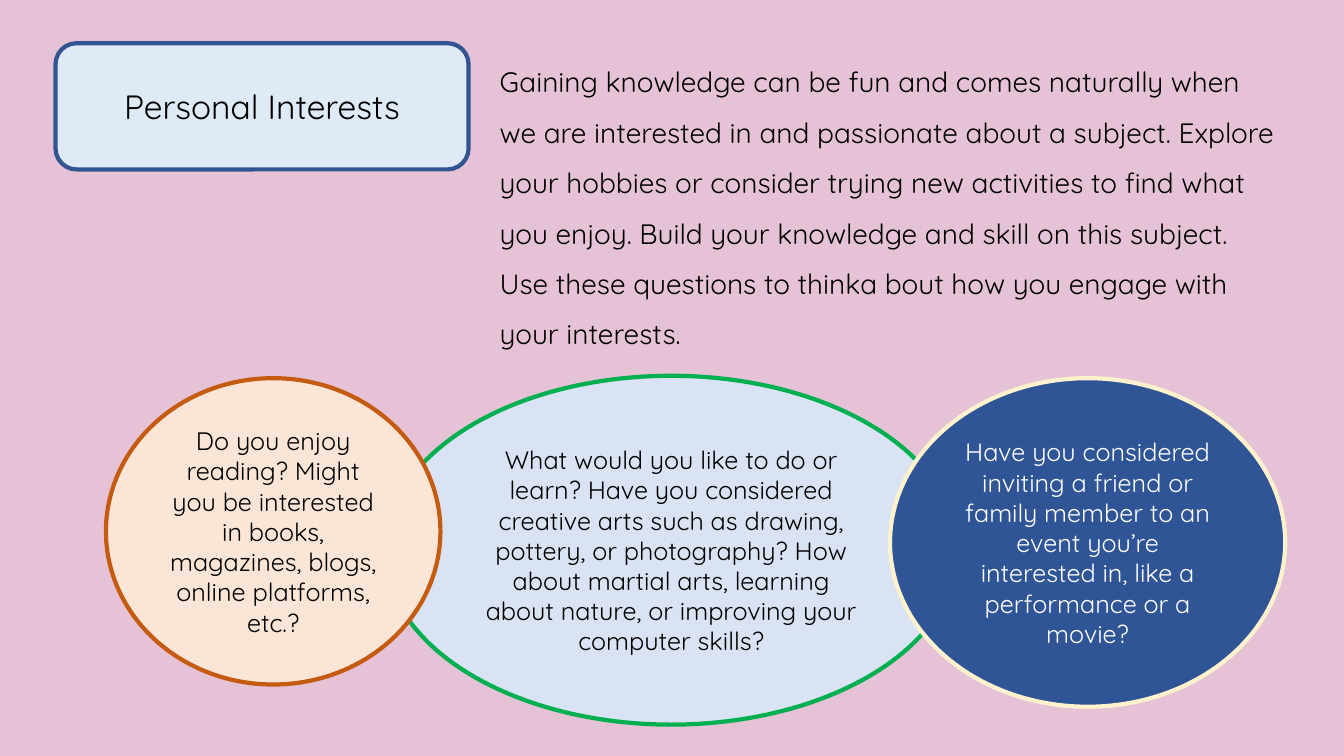
import pptx
import pptx.util
import pptx.dml.color
import pptx.enum.shapes
import pptx.enum.text

Cm = pptx.util.Cm
KIND = pptx.enum.shapes.MSO_SHAPE
ALIGN = pptx.enum.text.PP_ALIGN
ANCHOR = pptx.enum.text.MSO_ANCHOR


def paint(fill, color):
    fill.solid()
    fill.fore_color.rgb = pptx.dml.color.RGBColor.from_string(color)


def write(shape, text, size=18, color="000000", align=ALIGN.CENTER,
          anchor=ANCHOR.MIDDLE, space=1.0):
    frame = shape.text_frame
    frame.word_wrap = True
    frame.vertical_anchor = anchor
    para = frame.paragraphs[0]
    para.alignment = align
    para.line_spacing = space
    run = para.add_run()
    run.text = text
    run.font.name = "Quicksand"
    run.font.size = pptx.util.Pt(size)
    paint(run.font.fill, color)


deck = pptx.Presentation()
deck.slide_width, deck.slide_height = Cm(33.87), Cm(19.05)
slide = deck.slides.add_slide(deck.slide_layouts[6])
paint(slide.background.fill, "E6C2D7")

# Introduction
intro = slide.shapes.add_textbox(Cm(12.34), Cm(1.09), Cm(20.12), Cm(7.8))
write(intro, "Gaining knowledge can be fun and comes naturally when we are "
      "interested in and passionate about a subject. Explore your hobbies or "
      "consider trying new activities to find what you enjoy. Build your "
      "knowledge and skill on this subject. Use these questions to thinka "
      "bout how you engage with your interests.",
      size=20, align=ALIGN.LEFT, anchor=ANCHOR.TOP, space=1.5)

# Title and question bubbles, back to front:
# kind, place in cm, fill, line, text, size, text color
parts = [
    (KIND.ROUNDED_RECTANGLE, (1.4, 1.09, 10.41, 3.18), "DEEBF7", "325491",
     "Personal Interests", 24, "000000"),
    (KIND.OVAL, (9.7, 9.47, 14.43, 8.79), "DAE3F3", "00B050",
     "What would you like to do or learn? Have you considered creative arts "
     "such as drawing, pottery, or photography? How about martial arts, "
     "learning about nature, or improving your computer skills?", 18, "000000"),
    (KIND.OVAL, (22.43, 9.53, 9.96, 8.28), "2F5597", "FFF2CC",
     "Have you considered inviting a friend or family member to an event "
     "you’re interested in, like a performance or a movie?", 18, "FFFFFF"),
    (KIND.OVAL, (2.67, 9.53, 8.43, 7.72), "FBE5D6", "C55A11",
     "Do you enjoy reading? Might you be interested in books, magazines, "
     "blogs, online platforms, etc.?", 18, "000000"),
]
for kind, place, fill, line, text, size, color in parts:
    shape = slide.shapes.add_shape(kind, *map(Cm, place))
    shape.shadow.inherit = False
    paint(shape.fill, fill)
    paint(shape.line.fill, line)
    shape.line.width = pptx.util.Pt(3)
    write(shape, text, size=size, color=color)

deck.save("out.pptx")
